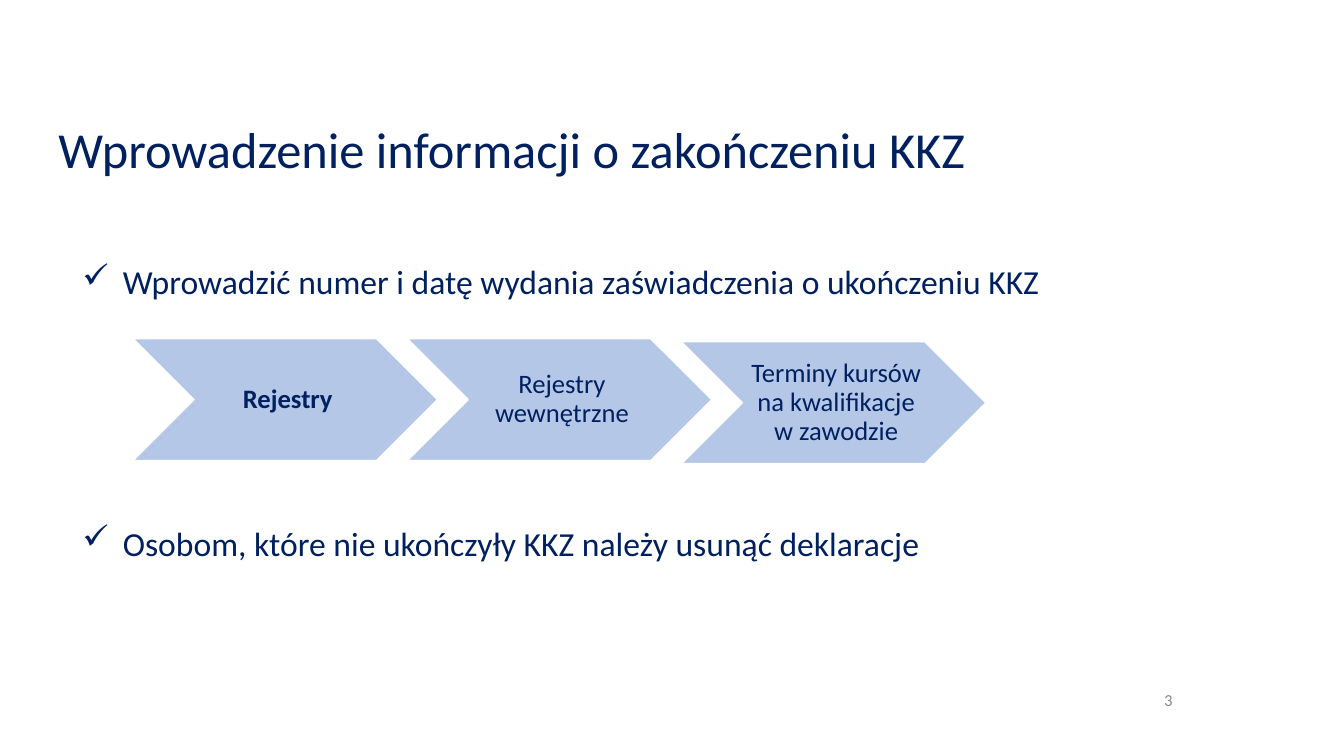
from lxml.etree import SubElement
from pptx import Presentation
from pptx.dml.color import RGBColor
from pptx.enum.shapes import MSO_SHAPE
from pptx.enum.text import MSO_ANCHOR, PP_ALIGN
from pptx.oxml.ns import qn
from pptx.util import Inches, Pt

NAVY, BLUE, GREY, WHITE = "002060", "B4C7E7", "898989", "FFFFFF"

prs = Presentation()
prs.slide_width, prs.slide_height = Inches(13.33), Inches(7.5)
s = prs.slides.add_slide(prs.slide_layouts[5])


def box(x, y, w, h):
    """Percent of the slide's width and height to lengths."""
    return [int(share * side / 100) for share, side in
            zip((x, y, w, h), (prs.slide_width, prs.slide_height) * 2)]


def add_run(p, text, size, color=NAVY, bold=False):
    r = p.add_run()
    r.text = text
    r.font.name, r.font.size, r.font.bold = "Calibri", Pt(size), bold
    r.font.color.rgb = RGBColor.from_string(color)


# Title
title = s.shapes.title
title.left, title.top, title.width, title.height = box(3.6, 11.6, 86.25, 17.07)
tf = title.text_frame
tf.vertical_anchor = MSO_ANCHOR.MIDDLE
p = tf.paragraphs[0]
p.alignment, p.line_spacing = PP_ALIGN.LEFT, 0.9
add_run(p, "Wprowadzenie informacji o zakończeniu KKZ", 36)

# Checklist, with room for the chevrons between its two points
tf = s.shapes.add_textbox(*box(5.4, 33.87, 86.25, 54.53)).text_frame
tf.word_wrap = True
points = ["Wprowadzić numer i datę wydania zaświadczenia o ukończeniu KKZ",
          "Osobom, które nie ukończyły KKZ należy usunąć deklaracje"]
for i, point in enumerate(points):
    p = tf.add_paragraph() if i else tf.paragraphs[0]
    pPr = p._p.get_or_add_pPr()
    pPr.set("marL", str(Inches(0.4)))
    pPr.set("indent", str(-Inches(0.4)))
    SubElement(SubElement(pPr, qn("a:buClr")), qn("a:srgbClr"), val=NAVY)
    SubElement(pPr, qn("a:buChar"), char="✓")
    if i:
        p.space_before = Pt(158)
    add_run(p, point, 24)

# Menu trail of chevrons
steps = [("Rejestry", 44.8, True),
         ("Rejestry wewnętrzne", 44.8, False),
         ("Terminy kursów na kwalifikacje w zawodzie", 45.2, False)]
for i, (step, top, bold) in enumerate(steps):
    sp = s.shapes.add_shape(MSO_SHAPE.CHEVRON, *box(9.9 + 20.4 * i, top, 22.65, 16.13))
    sp.shadow.inherit = False
    sp.fill.solid()
    sp.fill.fore_color.rgb = RGBColor.from_string(BLUE)
    sp.line.color.rgb = RGBColor.from_string(WHITE)
    sp.line.width = Pt(1)
    tf = sp.text_frame
    tf.word_wrap = True
    tf.vertical_anchor = MSO_ANCHOR.MIDDLE
    tf.margin_left = Inches(0.08)
    tf.margin_top = tf.margin_right = tf.margin_bottom = Inches(0.03)
    p = tf.paragraphs[0]
    p.alignment, p.line_spacing = PP_ALIGN.CENTER, 0.9
    add_run(p, step, 19, bold=bold)

# Slide number
tf = s.shapes.add_textbox(*box(65.49, 89.87, 22.5, 5.33)).text_frame
tf.word_wrap = True
tf.vertical_anchor = MSO_ANCHOR.MIDDLE
p = tf.paragraphs[0]
p.alignment = PP_ALIGN.RIGHT
add_run(p, "3", 12, GREY)

prs.save("out.pptx")
